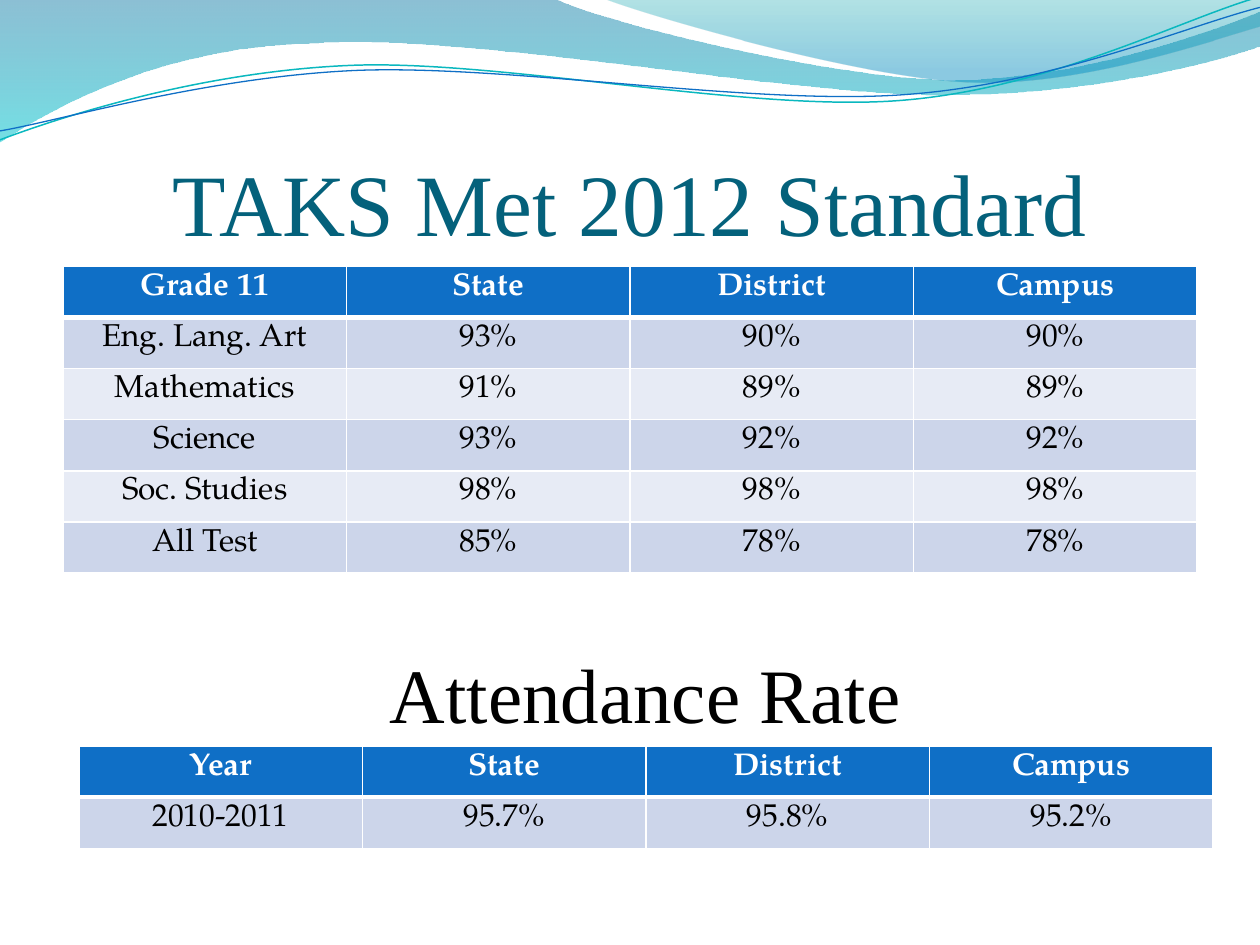
import pptx
import pptx.util
import pptx.dml.color
import pptx.enum.text
import pptx.oxml
import pptx.oxml.ns

Cm = pptx.util.Cm
Pt = pptx.util.Pt
qn = pptx.oxml.ns.qn
COLORS = {
    "title": "04617B",
    "text": "000000",
    "white": "FFFFFF",
    "header": "0F6FC6",
    "odd": "CCD5EA",
    "even": "E7EBF5",
    "teal": "0AB8BF",
    "deep": "0074A1",
    "aqua": "00C6CF",
    "sea": "00A1A9",
    "sky": "008BBF",
}
HEADING_FONT = "Times New Roman"
TABLE_FONT = "TeX Gyre Pagella"

WAVES = [
    {
        "points": [
            (0, 0), (11.18, -0.03),
            (12.09, 0.43, 16.87, 1.6, 19.25, 1.6),
            (21.67, 1.6, 24.33, 0.66, 25.4, 0.23),
            (25.43, 0.91),
            (24.97, 1.12, 22.1, 1.93, 18.95, 1.91),
            (15.8, 1.91, 9.7, 0.71, 6.53, 0.86),
            (3.28, 0.91, 1.17, 2.11, -0.03, 2.87),
            (0, 0),
        ],
        "stops": [(0, "deep", 45), (1, "aqua", 55)],
    },
    {
        "points": [
            (12.17, -0.03),
            (12.93, 0.28, 17.32, 1.57, 19.53, 1.65),
            (21.74, 1.75, 24.41, 0.81, 25.4, 0.53),
            (25.4, 0),
            (12.17, -0.03),
        ],
        "stops": [(0, "sea", 30), (0.8, "sky", 45)],
    },
]
RIPPLES = [
    {
        "points": [
            (0, 2.82),
            (1.22, 2.36, 4.01, 1.45, 7.04, 1.32),
            (10.03, 1.19, 15.06, 2.26, 18.11, 2.03),
            (21.16, 1.8, 23.83, 0.38, 25.35, -0.05),
        ],
        "color": "teal",
        "width": 0.85,
    },
    {
        "points": [
            (0, 2.64),
            (1.19, 2.44, 4.17, 1.55, 7.19, 1.42),
            (10.24, 1.3, 15.16, 2.13, 18.21, 1.91),
            (21.23, 1.7, 23.9, 0.53, 25.4, 0.15),
        ],
        "color": "header",
        "width": 0.75,
    },
]
SCORES = [
    ["Grade 11", "State", "District", "Campus"],
    ["Eng. Lang. Art", "93%", "90%", "90%"],
    ["Mathematics", "91%", "89%", "89%"],
    ["Science", "93%", "92%", "92%"],
    ["Soc. Studies", "98%", "98%", "98%"],
    ["All Test", "85%", "78%", "78%"],
]
ATTENDANCE = [
    ["Year", "State", "District", "Campus"],
    ["2010-2011", "95.7%", "95.8%", "95.2%"],
]


def rgb(name):
    return pptx.dml.color.RGBColor.from_string(COLORS[name])


def set_values(target, values):
    for name, value in values.items():
        setattr(target, name, value)


def write_text(frame, text, color, **font):
    para = frame.paragraphs[0]
    para.alignment = pptx.enum.text.PP_ALIGN.CENTER
    span = para.add_run()
    span.text = text
    set_values(span.font, font)
    span.font.color.rgb = rgb(color)


def bend_segments(shape, segments):
    lines = iter(list(shape.element.iter(qn("a:lnTo"))))
    for segment in segments:
        line = next(lines)
        if len(segment) == 2:
            continue
        curve = line.makeelement(qn("a:cubicBezTo"), {})
        line.addprevious(curve)
        for part in (line, next(lines), next(lines)):
            curve.append(part[0])
            part.getparent().remove(part)


def draw_outline(page, box, points, close):
    dots = [
        (Cm(box[0] + x), Cm(box[1] + y))
        for point in points
        for x, y in zip(point[::2], point[1::2])
    ]
    builder = page.shapes.build_freeform(*dots[0])
    builder.add_line_segments(dots[1:], close=close)
    shape = builder.convert_to_shape()
    bend_segments(shape, points[1:])
    shape.shadow.inherit = False
    return shape


def add_wave_header(page, box):
    for wave in WAVES:
        shape = draw_outline(page, box, wave["points"], True)
        shape.line.fill.background()
        shape.fill.gradient()
        shape.fill.gradient_angle = 270
        for stop, (position, color, _) in zip(shape.fill.gradient_stops, wave["stops"]):
            stop.position = position
            stop.color.rgb = rgb(color)
        tints = list(shape.element.spPr.iter(qn("a:srgbClr")))
        for tint, (_, _, opacity) in zip(tints, wave["stops"]):
            tint.append(tint.makeelement(qn("a:alpha"), {"val": str(opacity * 1000)}))
    for ripple in RIPPLES:
        shape = draw_outline(page, box, ripple["points"], False)
        shape.fill.background()
        shape.line.color.rgb = rgb(ripple["color"])
        shape.line.width = Pt(ripple["width"])


def place(shape, box):
    set_values(shape, dict(zip(("left", "top", "width", "height"), map(Cm, box))))


def add_title(page, box):
    title = page.shapes.title
    title.element.getparent().append(title.element)
    place(title, box)
    set_values(title.text_frame, {
        "margin_left": 0,
        "margin_right": 0,
        "margin_top": Cm(0.13),
        "margin_bottom": 0,
        "word_wrap": True,
        "auto_size": pptx.enum.text.MSO_AUTO_SIZE.NONE,
        "vertical_anchor": pptx.enum.text.MSO_ANCHOR.BOTTOM,
    })
    write_text(title.text_frame, "TAKS Met 2012 Standard", "title", size=Pt(50), name=HEADING_FONT)


def add_subtitle(page, box):
    subtitle = page.shapes.add_textbox(*map(Cm, box))
    set_values(subtitle.text_frame, {
        "word_wrap": True,
        "auto_size": pptx.enum.text.MSO_AUTO_SIZE.SHAPE_TO_FIT_TEXT,
    })
    write_text(subtitle.text_frame, "Attendance Rate", "text", size=Pt(44), name=HEADING_FONT)


def set_borders(cell, row):
    widths = {"L": 1, "R": 1, "T": 3 if row == 1 else 1, "B": 3 if row == 0 else 1}
    for side, width in widths.items():
        cell._tc.get_or_add_tcPr().append(pptx.oxml.parse_xml(
            f'<a:ln{side} {pptx.oxml.ns.nsdecls("a")} w="{Pt(width)}"><a:solidFill>'
            f'<a:srgbClr val="{COLORS["white"]}"/></a:solidFill></a:ln{side}>'
        ))


def add_rate_table(page, box, rows):
    table = page.shapes.add_table(len(rows), len(rows[0]), *map(Cm, box)).table
    for r, values in enumerate(rows):
        for c, value in enumerate(values):
            cell = table.cell(r, c)
            set_borders(cell, r)
            cell.fill.solid()
            cell.fill.fore_color.rgb = rgb("header" if r == 0 else "odd" if r % 2 else "even")
            write_text(cell.text_frame, value, "text" if r else "white",
                       size=Pt(18), name=TABLE_FONT, bold=r == 0)


def main():
    deck = pptx.Presentation()
    set_values(deck, {"slide_width": Cm(25.4), "slide_height": Cm(19.05)})
    page = deck.slides.add_slide(deck.slide_layouts[5])
    add_wave_header(page, (0, 0))
    add_title(page, (1.27, 1.96, 22.86, 3.17))
    add_rate_table(page, (1.27, 5.37, 22.86, 6.18), SCORES)
    add_subtitle(page, (4.66, 12.9, 16.71, 2.13))
    add_rate_table(page, (1.59, 15.04, 22.86, 2.06), ATTENDANCE)
    deck.save("out.pptx")


if __name__ == "__main__":
    main()
